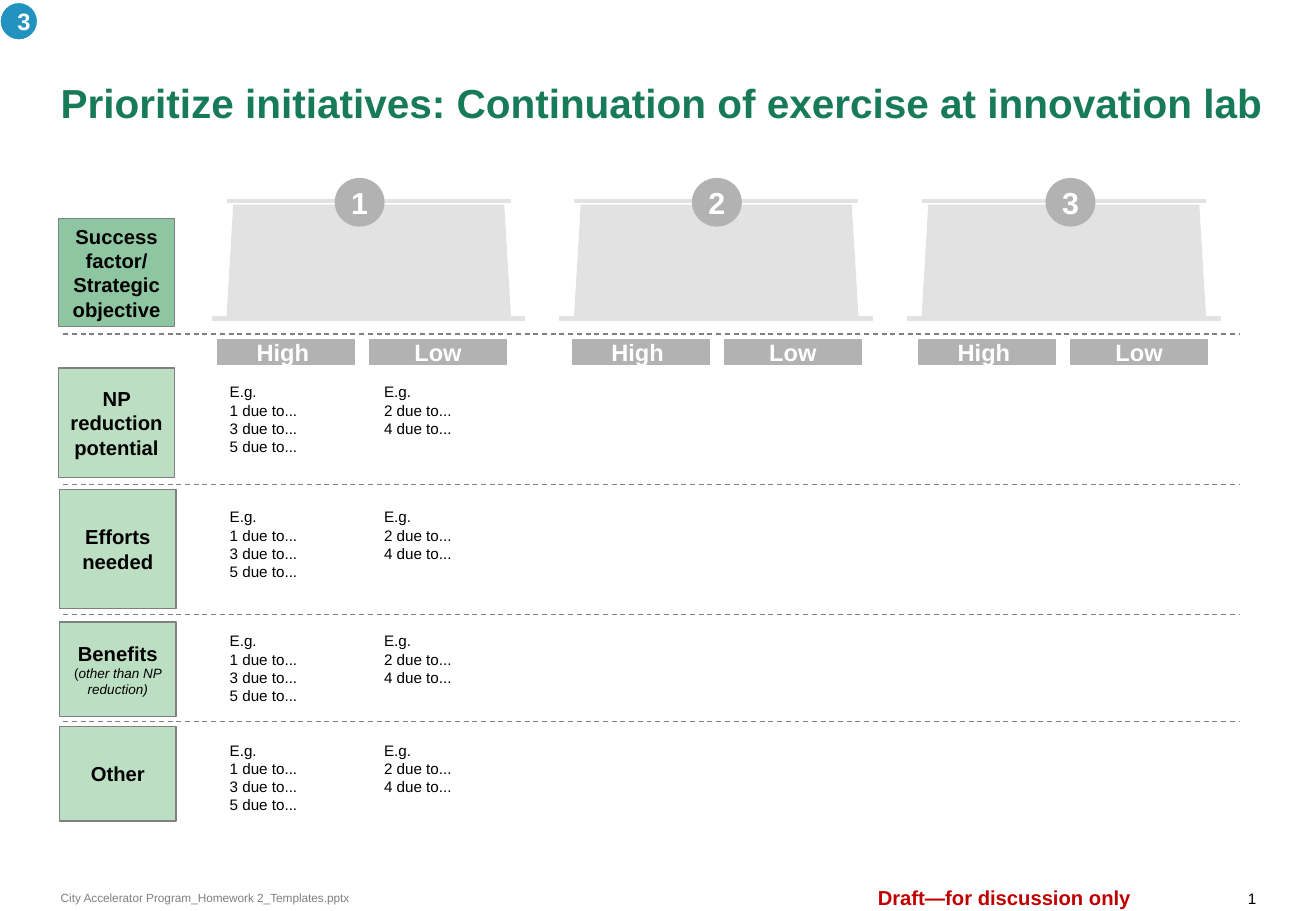
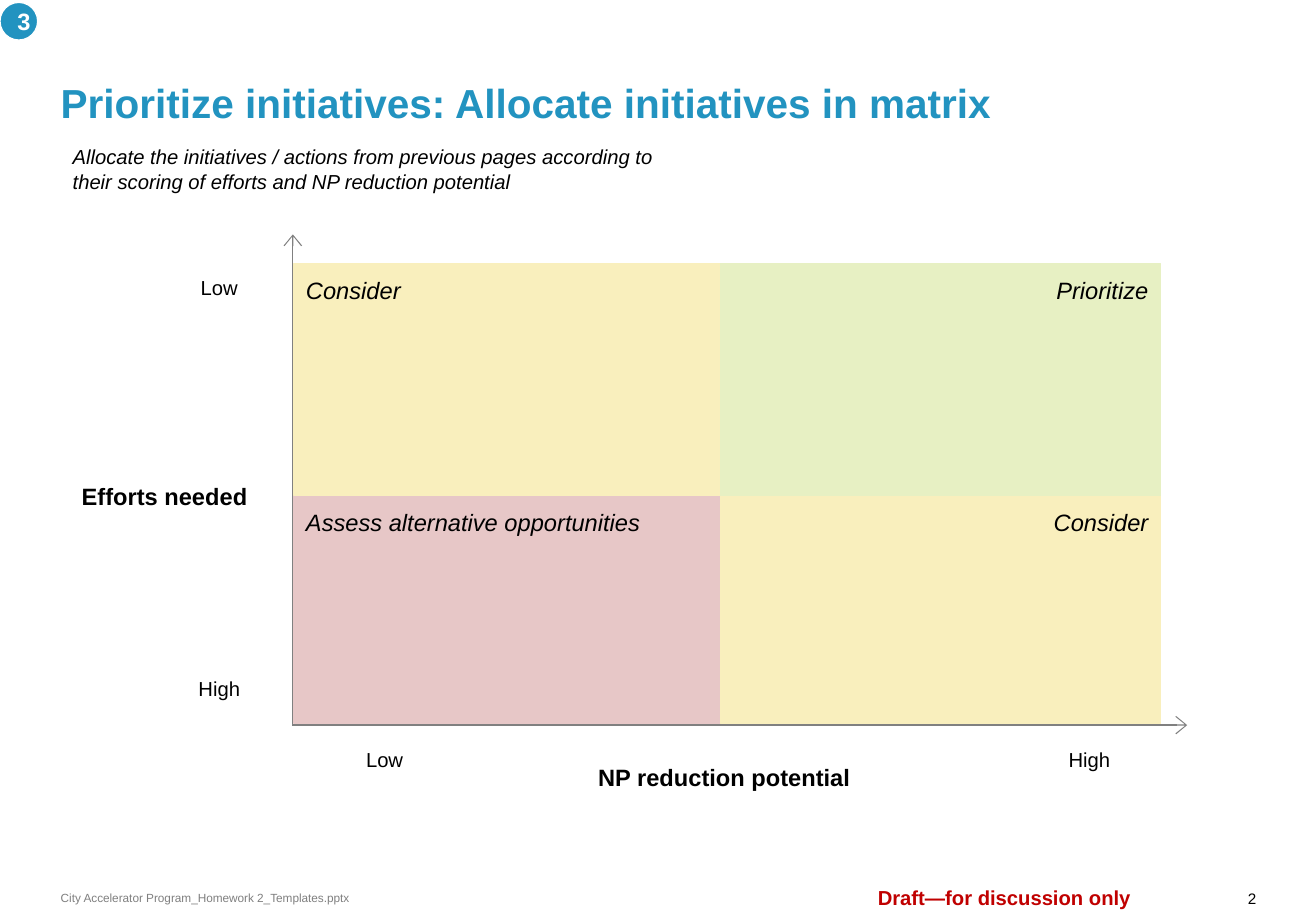
from collections import namedtuple

from lxml import etree
from pptx import Presentation
from pptx.dml.color import RGBColor
from pptx.enum.dml import MSO_LINE
from pptx.enum.shapes import MSO_CONNECTOR, MSO_SHAPE
from pptx.enum.text import MSO_ANCHOR, PP_ALIGN
from pptx.oxml.ns import qn
from pptx.util import Inches, Pt

RECTANGLE, ELLIPSE, TRAPEZOID = MSO_SHAPE.RECTANGLE, MSO_SHAPE.OVAL, MSO_SHAPE.TRAPEZOID
STRAIGHT, DASH = MSO_CONNECTOR.STRAIGHT, MSO_LINE.DASH
LEFT, CENTER, RIGHT = PP_ALIGN.LEFT, PP_ALIGN.CENTER, PP_ALIGN.RIGHT
TOP, MIDDLE, BOTTOM = MSO_ANCHOR.TOP, MSO_ANCHOR.MIDDLE, MSO_ANCHOR.BOTTOM

WIDTH, HEIGHT = 10.83, 7.5
FONT = "Arial"
BLACK, WHITE, GRAY, RED = "000000", "FFFFFF", "808080", "C00000"
GREEN, BLUE = "177B57", "2293C0"
DARK_LABEL, LIGHT_LABEL = "8EC6A1", "BCDEC2"
PILLAR_GRAY, BADGE_GRAY = "E2E2E2", "B2B2B2"
YELLOW, LIME, PINK = "F9EFBD", "E7F0C3", "E7C7C7"

Box = namedtuple("Box", "left top width height")
Run = namedtuple("Run", "text size color bold italic",
                 defaults=(12, BLACK, False, False))


def inside(box, left, top, width, height):
    """Box offset from the corner of another box."""
    return Box(box.left + left, box.top + top, width, height)


def inches(box):
    return [Inches(length) for length in box]


def color(hex_string):
    return RGBColor.from_string(hex_string)


def write(shape, paragraphs, align=LEFT, anchor=TOP, insets=(0.1, 0.1),
          wrap=True, indent=0):
    """Fill a shape with paragraphs, each one a list of runs."""
    frame = shape.text_frame
    frame.word_wrap = wrap
    frame.vertical_anchor = anchor
    frame.margin_left = frame.margin_right = Inches(insets[0])
    frame.margin_top = frame.margin_bottom = Inches(insets[1])
    for index, runs in enumerate(paragraphs):
        paragraph = frame.paragraphs[0] if index == 0 else frame.add_paragraph()
        paragraph.alignment = align
        if indent:
            properties = paragraph._p.get_or_add_pPr()
            properties.set("marL", str(Inches(indent)))
            properties.set("indent", "0")
        for item in runs:
            run = paragraph.add_run()
            run.text = item.text
            run.font.name = FONT
            run.font.size = Pt(item.size)
            run.font.bold = item.bold
            run.font.italic = item.italic
            run.font.color.rgb = color(item.color)


def add_text(slide, box, *runs, **style):
    write(slide.shapes.add_textbox(*inches(box)), [runs], **style)


def add_block(slide, kind, box, fill, line=None):
    shape = slide.shapes.add_shape(kind, *inches(box))
    shape.shadow.inherit = False
    shape.fill.solid()
    shape.fill.fore_color.rgb = color(fill)
    shape.line.color.rgb = color(line or fill)
    shape.line.width = Pt(0.75)
    return shape


def add_line(slide, start, end, dashed=False, arrow=False):
    connector = slide.shapes.add_connector(STRAIGHT, *inches(start + end))
    connector.line.color.rgb = color(GRAY)
    connector.line.width = Pt(0.75)
    if dashed:
        connector.line.dash_style = DASH
    if arrow:
        etree.SubElement(connector.line._get_or_add_ln(), qn("a:headEnd"),
                         type="arrow", w="lg", len="med")
    etree.SubElement(connector._element.spPr, qn("a:effectLst"))


def add_page(presentation, number, title, title_color):
    """Slide with the shared footer, title and section badge."""
    slide = presentation.slides.add_slide(presentation.slide_layouts[6])
    # Footer
    add_text(slide, Box(0.5, 7.33, 2.5, 0.12),
             Run("City Accelerator Program_Homework 2_Templates.pptx", 7, GRAY),
             anchor=MIDDLE, insets=(0, 0))
    add_text(slide, Box(7.19, 7.29, 2.15, 0.2),
             Run("Draft—for discussion only", 12, RED, True),
             align=CENTER, insets=(0, 0), wrap=False)
    add_text(slide, Box(10.13, 7.32, 0.21, 0.14), Run(str(number), 9),
             align=RIGHT, insets=(0, 0), wrap=False)
    # Title and section badge
    add_text(slide, Box(0.5, 0.18, 9.96, 0.91), Run(title, 24, title_color, True),
             anchor=BOTTOM, insets=(0, 0.05))
    badge = add_block(slide, ELLIPSE, Box(0, 0.02, 0.31, 0.31), BLUE, WHITE)
    write(badge, [[Run("3", 14, WHITE, True)]], align=CENTER, anchor=MIDDLE)
    return slide


def add_label(slide, box, paragraphs, fill=LIGHT_LABEL, side_inset=0.1):
    label = add_block(slide, RECTANGLE, box, fill, GRAY)
    write(label, paragraphs, align=CENTER, anchor=MIDDLE, insets=(side_inset, 0.1))


def add_pillar(slide, box, number, badge_left, scores_left):
    """Pillar with its number and the High and Low headings below it."""
    bar, margin = 0.03, 0.12
    inner = box.width - 2 * margin
    body = add_block(slide, TRAPEZOID, inside(box, margin, 0.05, inner, 0.91), PILLAR_GRAY)
    body.adjustments[0] = 0.06
    add_block(slide, RECTANGLE, inside(box, margin, 0, inner, bar), PILLAR_GRAY)
    add_block(slide, RECTANGLE,
              inside(box, 0, box.height - bar, box.width, bar), PILLAR_GRAY)
    badge = add_block(slide, ELLIPSE, inside(box, badge_left, -0.17, 0.4, 0.39), BADGE_GRAY)
    write(badge, [[Run(str(number), 18, WHITE, True)]],
          align=CENTER, anchor=MIDDLE, insets=(0, 0), wrap=False)
    for index, score in enumerate(("High ", "Low")):
        heading = add_block(
            slide, RECTANGLE,
            inside(box, scores_left + 1.25 * index, 1.16, 1.13, 0.2), BADGE_GRAY)
        write(heading, [[Run(score, 14, WHITE, True)]], align=CENTER, anchor=MIDDLE)


def add_examples(slide, top):
    for left, numbers in ((1.77, (1, 3, 5)), (3.04, (2, 4))):
        lines = ["E.g."] + [f"{number} due to..." for number in numbers]
        example = slide.shapes.add_textbox(*inches(Box(left, top, 1.18, 0.88)))
        write(example, [[Run(line, 9)] for line in lines], insets=(0, 0.1), indent=0.12)


def add_scoring_slide(presentation):
    slide = add_page(
        presentation, 1,
        "Prioritize initiatives: Continuation of exercise at innovation lab", GREEN)

    def bold(text):
        return Run(text, bold=True)

    # Header row
    add_label(slide, Box(0.48, 1.8, 0.96, 0.89),
              [[bold("Success factor/")], [bold("Strategic objective")]], DARK_LABEL, 0)
    offsets = ((1.01, 0.04), (1.09, 0.1), (1.14, 0.09))
    for index, (badge_left, scores_left) in enumerate(offsets):
        add_pillar(slide, Box(1.75 + 2.86 * index, 1.64, 2.57, 1),
                   index + 1, badge_left, scores_left)

    # Criteria rows: rule above, label left, top and height, example top, label
    rows = (
        (2.75, 0.48, 3.03, 0.9, 3.05, [bold("NP reduction potential")]),
        (3.99, 0.49, 4.03, 0.98, 4.08, [bold("Efforts needed")]),
        (5.06, 0.49, 5.12, 0.78, 5.1,
         [bold("Benefits "), Run("(", 8), Run("other than NP reduction)", 8, italic=True)]),
        (5.94, 0.49, 5.98, 0.78, 6, [bold("Other")]),
    )
    for rule, left, top, height, example_top, runs in rows:
        add_line(slide, (0.52, rule), (10.2, rule), dashed=True)
        add_label(slide, Box(left, top, 0.96, height), [runs])
        add_examples(slide, example_top)


def add_matrix(slide, box):
    """Two by two matrix with its axes, in which the quadrants overlap a little."""
    width, height = 3.62, 1.91
    right, bottom = box.width - width, box.height - height
    quadrants = (
        (0, bottom, PINK, "Assess alternative opportunities"),
        (0, 0, YELLOW, "Consider"),
        (right, bottom, YELLOW, "Consider"),
        (right, 0, LIME, "Prioritize"),
    )
    for left, top, fill, _ in quadrants:
        add_block(slide, RECTANGLE, inside(box, left, top, width, height), fill)

    # Axes
    base = box.top + box.height + 0.01
    add_line(slide, (box.left - 0.01, box.top - 0.24), (box.left - 0.01, base), arrow=True)
    add_line(slide, (box.left + box.width + 0.22, base), (box.left - 0.02, base), arrow=True)

    # Quadrant names
    name_width = 3.26
    for left, top, _, name in quadrants:
        name_left = box.width - name_width if left else 0
        name_top = height if top else 0
        add_text(slide, inside(box, name_left, name_top, name_width, 0.43),
                 Run(name, 14, italic=True), align=RIGHT if left else LEFT)


def add_matrix_slide(presentation):
    slide = add_page(presentation, 2,
                     "Prioritize initiatives: Allocate initiatives in matrix", BLUE)
    add_text(slide, Box(0.5, 1.09, 5, 0.6),
             Run("Allocate the initiatives / actions from previous pages according to "
                 "their scoring of efforts and NP reduction potential", italic=True))
    matrix = Box(2.42, 2.17, 7.13, 3.79)
    add_matrix(slide, matrix)

    # Axis names and scale ends
    labels = (
        (-1.85, 1.7, 1.57, "Efforts needed", True),
        (-1.16, 0, 1.09, "Low", False),
        (-1.2, 3.3, 1.17, "High", False),
        (2.4, 4.01, 2.28, "NP reduction potential", True),
        (0.2, 3.88, 1.09, "Low", False),
        (5.96, 3.88, 1.17, "High", False),
    )
    for left, top, width, text, is_name in labels:
        add_text(slide, inside(matrix, left, top, width, 0.43),
                 Run(text, 14 if is_name else 12, bold=is_name),
                 align=CENTER, wrap=False)


def main():
    presentation = Presentation()
    presentation.slide_width = Inches(WIDTH)
    presentation.slide_height = Inches(HEIGHT)
    add_scoring_slide(presentation)
    add_matrix_slide(presentation)
    presentation.save("out.pptx")


if __name__ == "__main__":
    main()
